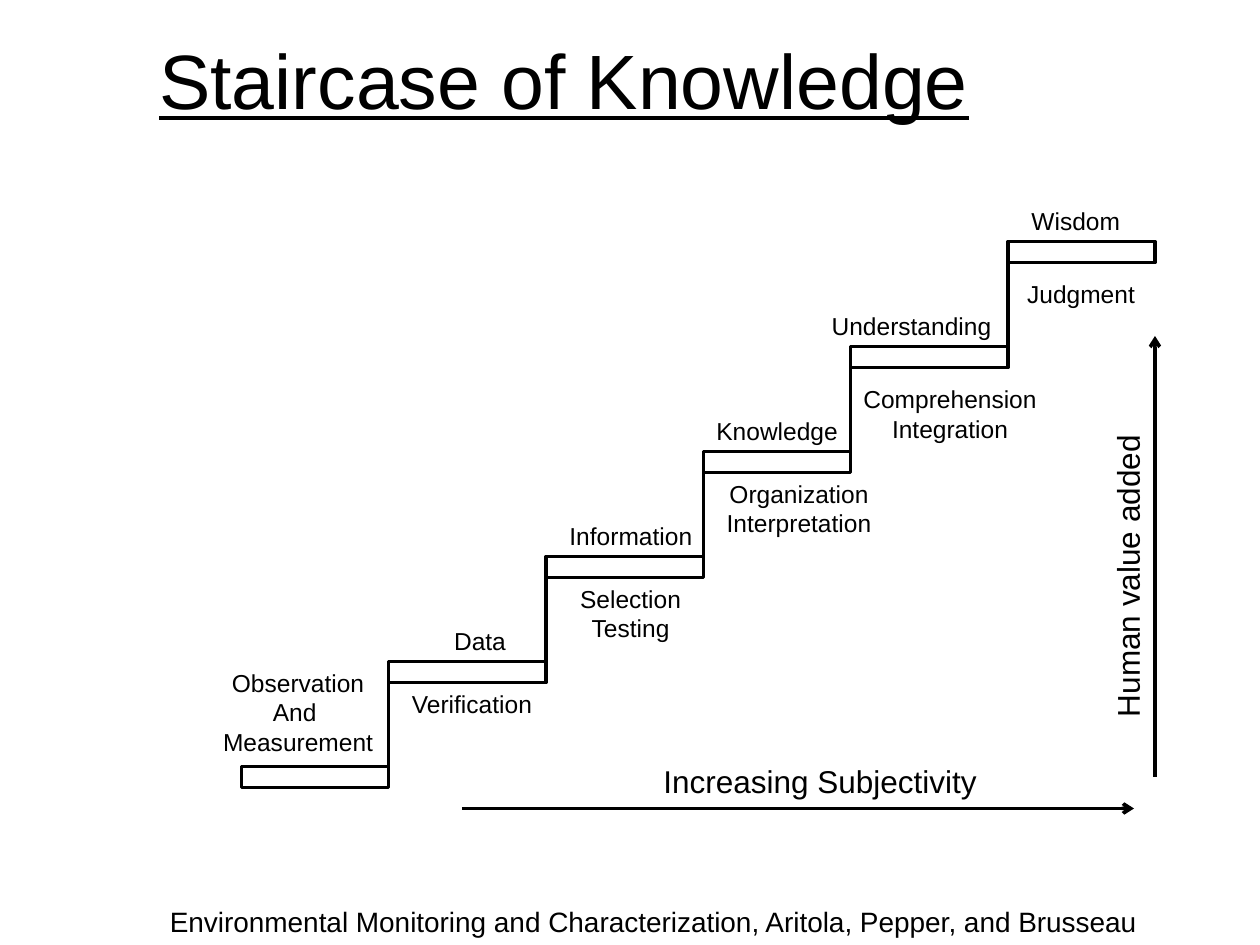
from dataclasses import dataclass
from itertools import pairwise

from lxml import etree
from pptx import Presentation
from pptx import util as u
from pptx.dml.color import RGBColor
from pptx.enum import shapes, text
from pptx.oxml import ns

INK, PAPER = "000000", "FFFFFF"
TREAD_HEIGHT, RISE, FIRST_TOP = 12, 60, 438
EDGES = (138, 222, 312, 402, 486, 576, 660)  # left and right edges of the treads


@dataclass(frozen=True)
class Label:
    words: str
    left: float
    top: float
    width: float
    height: float
    size: float = 14
    centred: bool = True
    rotation: float = 0
    underline: bool = False
    wrap: bool = False


LABELS = (
    # What each step holds
    Label("Observation\nAnd \nMeasurement", 120, 378, 100.8, 58.3),
    Label("Data", 252, 354, 44.6, 24.5),
    Label("Information", 318, 294, 85, 24.5),
    Label("Knowledge", 402, 234, 84.2, 24.5),
    Label("Understanding", 468, 174, 105.8, 24.5),
    Label("Wisdom", 582, 114, 65.5, 24.5),
    # What leads to the next step
    Label("Verification", 228, 390, 83.5, 24.5),
    Label("Selection\nTesting", 324, 330, 72.7, 41),
    Label("Organization\nInterpretation", 408, 270, 97.2, 41),
    Label("Comprehension\nIntegration", 486, 216, 113.8, 41),
    Label("Judgment", 579.6, 156, 76.3, 24.5),
    # Axis names and citation
    Label("Increasing Subjectivity", 372, 432, 195, 28.8, 18, False),
    Label("Human value added", 555.8, 314, 177, 28.8, 18, False, 270),
    Label("Environmental Monitoring and Characterization, Aritola, Pepper, and Brusseau",
          90, 513.4, 573.8, 26.6, 16, False),
)
TITLE = Label("Staircase of Knowledge", 84, 0, 624, 90, 44, False, underline=True, wrap=True)


def colour(value: str) -> RGBColor:
    return RGBColor.from_string(value)


def apply(target, values: dict) -> None:
    for name, value in values.items():
        setattr(target, name, value)


def draw_label(page, label: Label) -> None:
    box = page.shapes.add_textbox(
        *map(u.Pt, (label.left, label.top, label.width, label.height)))
    box.rotation = label.rotation
    fit = text.MSO_AUTO_SIZE.NONE if label.wrap else text.MSO_AUTO_SIZE.SHAPE_TO_FIT_TEXT
    anchor = text.MSO_ANCHOR.MIDDLE if label.wrap else text.MSO_ANCHOR.TOP
    apply(box.text_frame, {"word_wrap": label.wrap, "auto_size": fit,
                           "vertical_anchor": anchor, "text": label.words})
    for para in box.text_frame.paragraphs:
        para.alignment = text.PP_ALIGN.CENTER if label.centred else text.PP_ALIGN.LEFT
        for span in para.runs:
            apply(span.font, {"name": "Arial", "size": u.Pt(label.size),
                              "underline": label.underline})
            span.font.color.rgb = colour(INK)


def draw_tread(page, left: float, top: float, width: float) -> None:
    tread = page.shapes.add_shape(
        shapes.MSO_SHAPE.RECTANGLE, *map(u.Pt, (left, top, width, TREAD_HEIGHT)))
    tread.shadow.inherit = False
    tread.fill.solid()
    tread.fill.fore_color.rgb = colour(PAPER)
    tread.line.color.rgb = colour(INK)
    tread.line.width = u.Pt(2)


def draw_line(page, x1: float, y1: float, x2: float, y2: float, arrow: bool = False) -> None:
    line = page.shapes.add_connector(
        shapes.MSO_CONNECTOR.STRAIGHT, *map(u.Pt, (x1, y1, x2, y2)))
    line.line.color.rgb = colour(INK)
    line.line.width = u.Pt(2)
    if arrow:
        etree.SubElement(line.line._get_or_add_ln(), ns.qn("a:tailEnd"), type="arrow")
    etree.SubElement(line._element.spPr, ns.qn("a:effectLst"))


def main() -> None:
    deck = Presentation()
    apply(deck, {"slide_width": u.Pt(720), "slide_height": u.Pt(540)})
    page = deck.slides.add_slide(deck.slide_layouts[6])
    draw_label(page, TITLE)

    # Staircase: each riser joins the middles of two treads, the last ends at the top
    last = len(EDGES) - 2
    for step, (left, right) in enumerate(pairwise(EDGES)):
        top = FIRST_TOP - step * RISE
        draw_tread(page, left, top, right - left)
        if step < last:
            middle = top + TREAD_HEIGHT / 2
            end = top - RISE if step == last - 1 else middle - RISE
            draw_line(page, right, middle, right, end)

    # Axes
    draw_line(page, 264, 462, 648, 462, arrow=True)
    draw_line(page, 660, 444, 660, 192, arrow=True)

    for label in LABELS:
        draw_label(page, label)
    deck.save("out.pptx")


if __name__ == "__main__":
    main()
